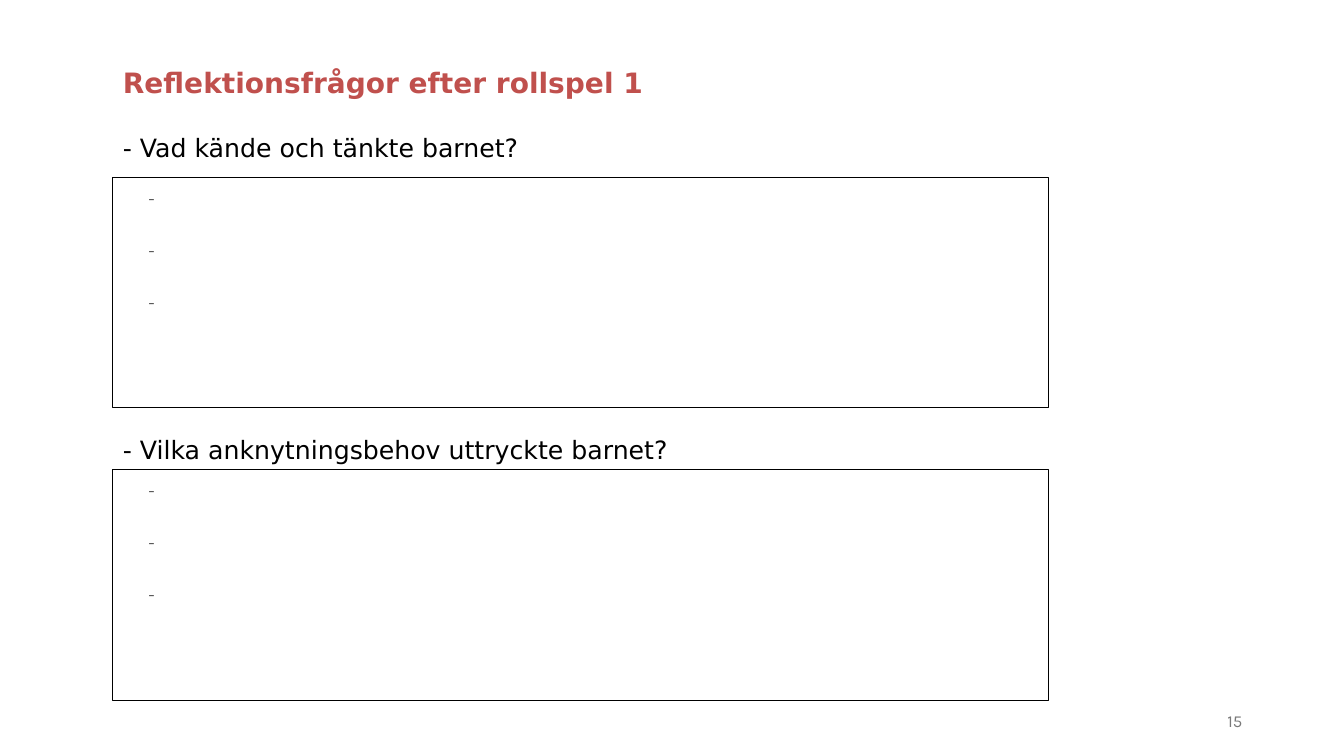
from pptx import Presentation
from pptx import util as u
from pptx.dml import color
from pptx.enum import shapes, text


def rgb(value):
    return color.RGBColor.from_string(value)


class ReflectionPage:
    heading_font = "DejaVu Sans"
    answer_font = "Cambria"
    number_font = "Karla"
    black = "000000"
    left = 1.12

    def __init__(self, deck):
        self.page = deck.slides.add_slide(deck.slide_layouts[6])

    def add_span(self, para, words, font, size, ink, bold=False):
        span = para.add_run()
        span.text = words
        span.font.name = font
        span.font.size = u.Pt(size)
        span.font.bold = bold
        span.font.color.rgb = rgb(ink)

    def add_label(self, place, words, font, size, ink, bold=False,
                  align=text.PP_ALIGN.LEFT, anchor=text.MSO_ANCHOR.TOP):
        box = self.page.shapes.add_textbox(*map(u.Inches, place))
        frame = box.text_frame
        frame.word_wrap = True
        frame.vertical_anchor = anchor
        para = frame.paragraphs[0]
        para.alignment = align
        self.add_span(para, words, font, size, ink, bold)

    def add_title(self, words):
        self.add_label((self.left, 0.6, 11.29, 0.44), words,
                       self.heading_font, 20, "C0504D", bold=True)

    def add_question(self, top, words):
        self.add_label((self.left, top, 6.67, 0.4), words,
                       self.heading_font, 18, self.black)

    def add_number(self, words):
        self.add_label((9.42, 6.95, 3, 0.4), words, self.number_font, 12, "797979",
                       align=text.PP_ALIGN.RIGHT, anchor=text.MSO_ANCHOR.MIDDLE)

    def add_answer_box(self, top, height, count=3):
        box = self.page.shapes.add_shape(
            shapes.MSO_SHAPE.RECTANGLE,
            *map(u.Inches, (self.left, top, 9.28, height)))
        box.shadow.inherit = False
        box.fill.solid()
        box.fill.fore_color.rgb = rgb("FFFFFF")
        box.line.color.rgb = rgb(self.black)
        box.line.width = u.Pt(0.75)
        frame = box.text_frame
        frame.word_wrap = True
        frame.vertical_anchor = text.MSO_ANCHOR.TOP
        for index in range(count):
            para = frame.add_paragraph() if index else frame.paragraphs[0]
            para.alignment = text.PP_ALIGN.LEFT
            para.line_spacing = 1.07
            para.space_before = u.Pt(12)
            para.space_after = u.Pt(6)
            indents = para._p.get_or_add_pPr()
            indents.set("marL", str(u.Inches(0.5)))
            indents.set("indent", str(u.Inches(-0.25)))
            self.add_span(para, "-", self.answer_font, 15, "595959")


def main():
    deck = Presentation()
    deck.slide_width = u.Inches(13.33)
    deck.slide_height = u.Inches(7.5)
    reflection = ReflectionPage(deck)
    reflection.add_title("Reflektionsfrågor efter rollspel 1")
    for question_top, question, box_top, box_height in (
        (1.26, "- Vad kände och tänkte barnet?", 1.76, 2.28),
        (4.26, "- Vilka anknytningsbehov uttryckte barnet?", 4.66, 2.29),
    ):
        reflection.add_question(question_top, question)
        reflection.add_answer_box(box_top, box_height)
    reflection.add_number("15")
    deck.save("out.pptx")


if __name__ == "__main__":
    main()
